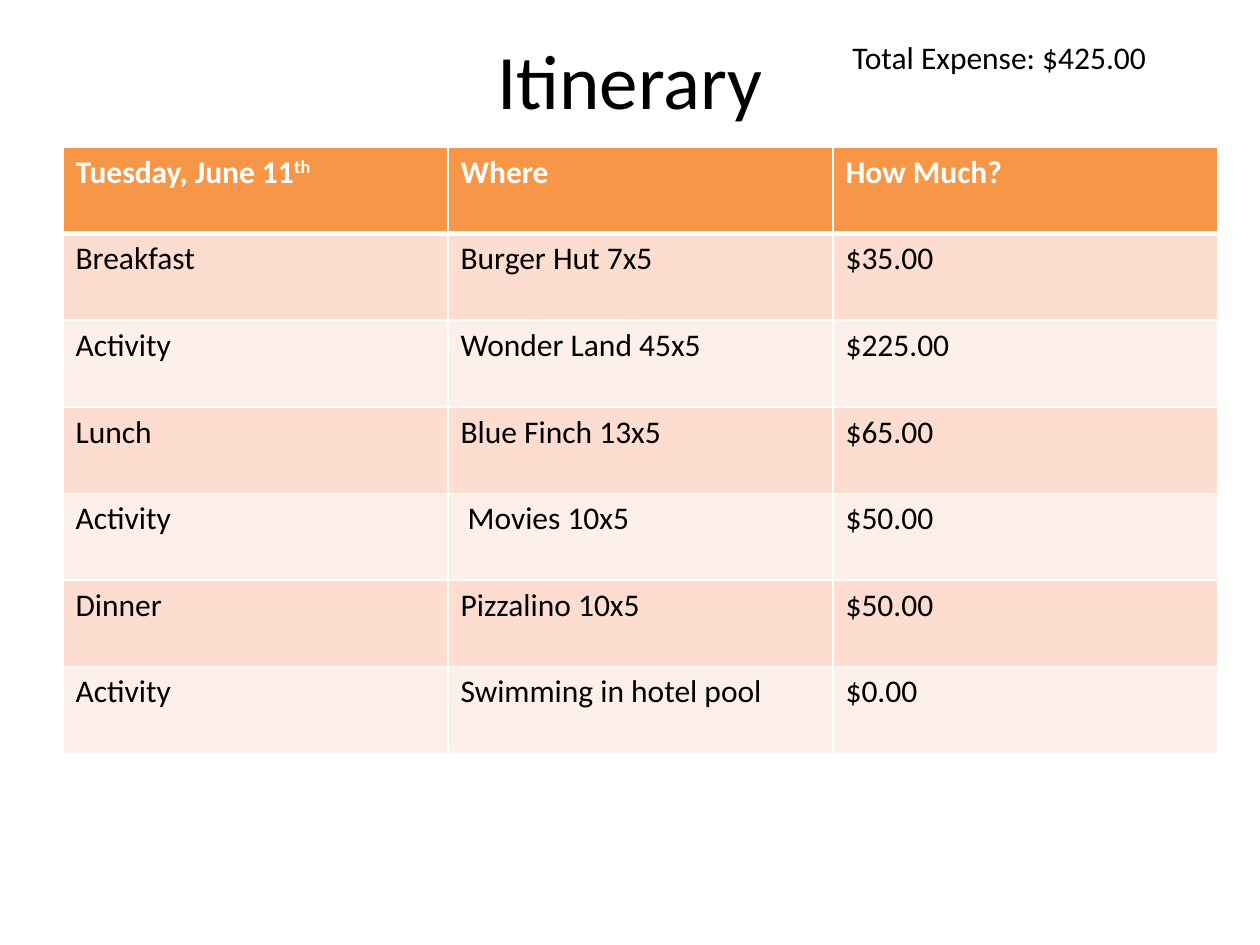
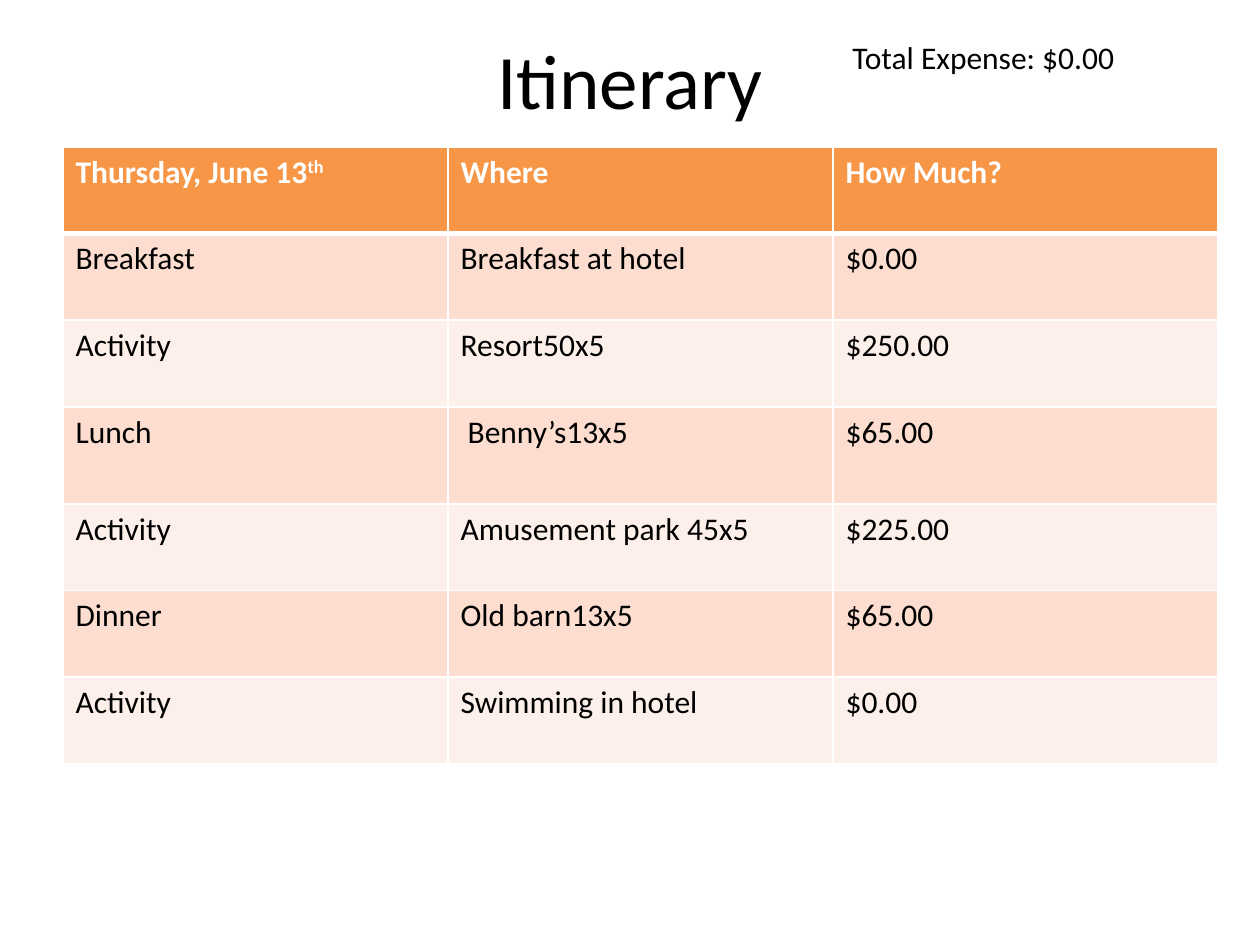
from pptx import Presentation
from pptx.dml.color import RGBColor
from pptx.enum.text import MSO_ANCHOR as Anchor, PP_ALIGN as Align
from pptx.oxml import parse_xml
from pptx.oxml.ns import nsdecls
from pptx.util import Pt

# Shared look
WHITE = RGBColor(0xFF, 0xFF, 0xFF)
BLACK = RGBColor(0, 0, 0)
ORANGE = RGBColor(0xF7, 0x96, 0x46)
PEACH = RGBColor(0xFC, 0xDD, 0xCF)
PALE_PEACH = RGBColor(0xFD, 0xEF, 0xE9)
FONT = "Calibri"
COLUMN_WIDTH = 220
ROW_HEIGHT = 49.5

# Table contents
SLOTS = ["Breakfast", "Activity", "Lunch", "Activity", "Dinner", "Activity"]
DAYS = [
    {
        "date": "Tuesday, June 11",
        "total": "$425.00",
        "places": ["Burger Hut 7x5", "Wonder Land 45x5", "Blue Finch 13x5",
                   " Movies 10x5", "Pizzalino 10x5", "Swimming in hotel pool"],
        "costs": ["$35.00", "$225.00", "$65.00", "$50.00", "$50.00", "$0.00"],
        "tall_rows": {},
    },
    {
        "date": "Thursday, June 13",
        "total": "$0.00",
        "places": ["Breakfast at hotel", "Resort50x5", " Benny’s13x5",
                   "Amusement park 45x5", "Old barn13x5", "Swimming in hotel"],
        "costs": ["$0.00", "$250.00", "$65.00", "$225.00", "$65.00", "$0.00"],
        "tall_rows": {3: 55.5},
    },
]


def write(frame, text, size=18, color=BLACK, bold=False, align=Align.LEFT,
          anchor=Anchor.TOP, superscript=""):
    frame.word_wrap = True
    frame.vertical_anchor = anchor
    para = frame.paragraphs[0]
    para.alignment = align
    for part in filter(None, (text, superscript)):
        span = para.add_run()
        span.text = part
        span.font.name = FONT
        span.font.size = Pt(size)
        span.font.bold = bold
        span.font.color.rgb = color
    if superscript:
        span.font._element.set("baseline", "30000")


def set_borders(cell, **widths):
    properties = cell._tc.get_or_add_tcPr()
    for side in "LRTB":
        width = Pt(widths.get(side, 1))
        properties.append(parse_xml(
            f'<a:ln{side} {nsdecls("a")} w="{width}"><a:solidFill>'
            f'<a:srgbClr val="{WHITE}"/></a:solidFill></a:ln{side}>'))


deck = Presentation()
deck.slide_width, deck.slide_height = Pt(720), Pt(540)
blank = deck.slide_layouts[6]

for day in DAYS:
    page = deck.slides.add_slide(blank)

    # Title and total
    title = page.shapes.add_textbox(Pt(36), Pt(0), Pt(648), Pt(90))
    write(title.text_frame, "Itinerary", size=44, align=Align.CENTER,
          anchor=Anchor.MIDDLE)
    total = page.shapes.add_textbox(Pt(480), Pt(18), Pt(222), Pt(29))
    write(total.text_frame, f"Total Expense: {day['total']}")

    # Day plan
    rows = [(day["date"], "Where", "How Much?"),
            *zip(SLOTS, day["places"], day["costs"])]
    plan = page.shapes.add_table(
        len(rows), 3, Pt(36), Pt(84), Pt(3 * COLUMN_WIDTH),
        Pt(len(rows) * ROW_HEIGHT)).table
    for column in plan.columns:
        column.width = Pt(COLUMN_WIDTH)
    for r, values in enumerate(rows):
        plan.rows[r].height = Pt(day["tall_rows"].get(r, ROW_HEIGHT))
        header = r == 0
        fill = ORANGE if header else PEACH if r % 2 else PALE_PEACH
        for c, value in enumerate(values):
            cell = plan.cell(r, c)
            set_borders(cell, B=3 if header else 1, T=3 if r == 1 else 1)
            cell.fill.solid()
            cell.fill.fore_color.rgb = fill
            write(cell.text_frame, value, bold=header,
                  color=WHITE if header else BLACK,
                  superscript="th" if header and c == 0 else "")

deck.save("out.pptx")
